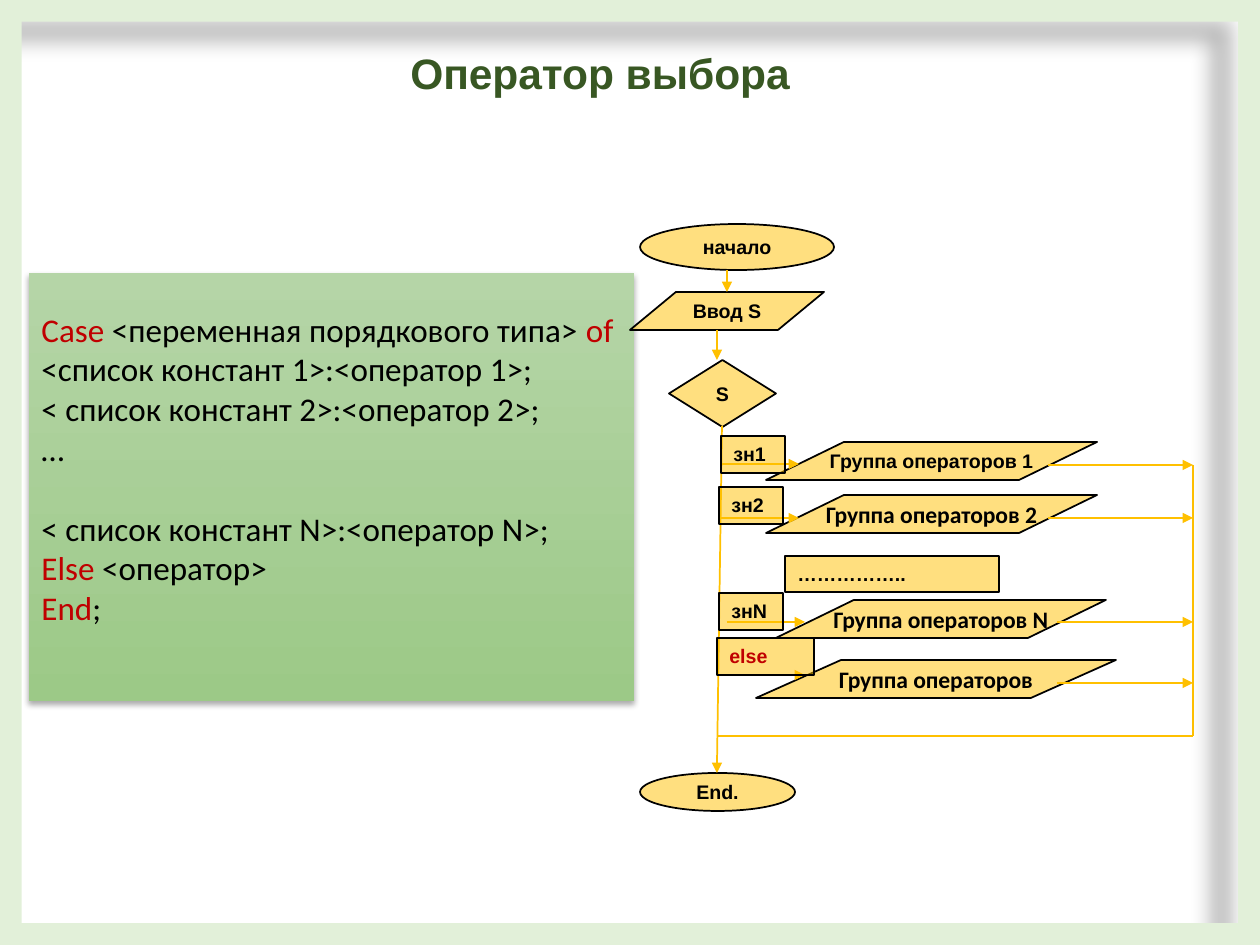
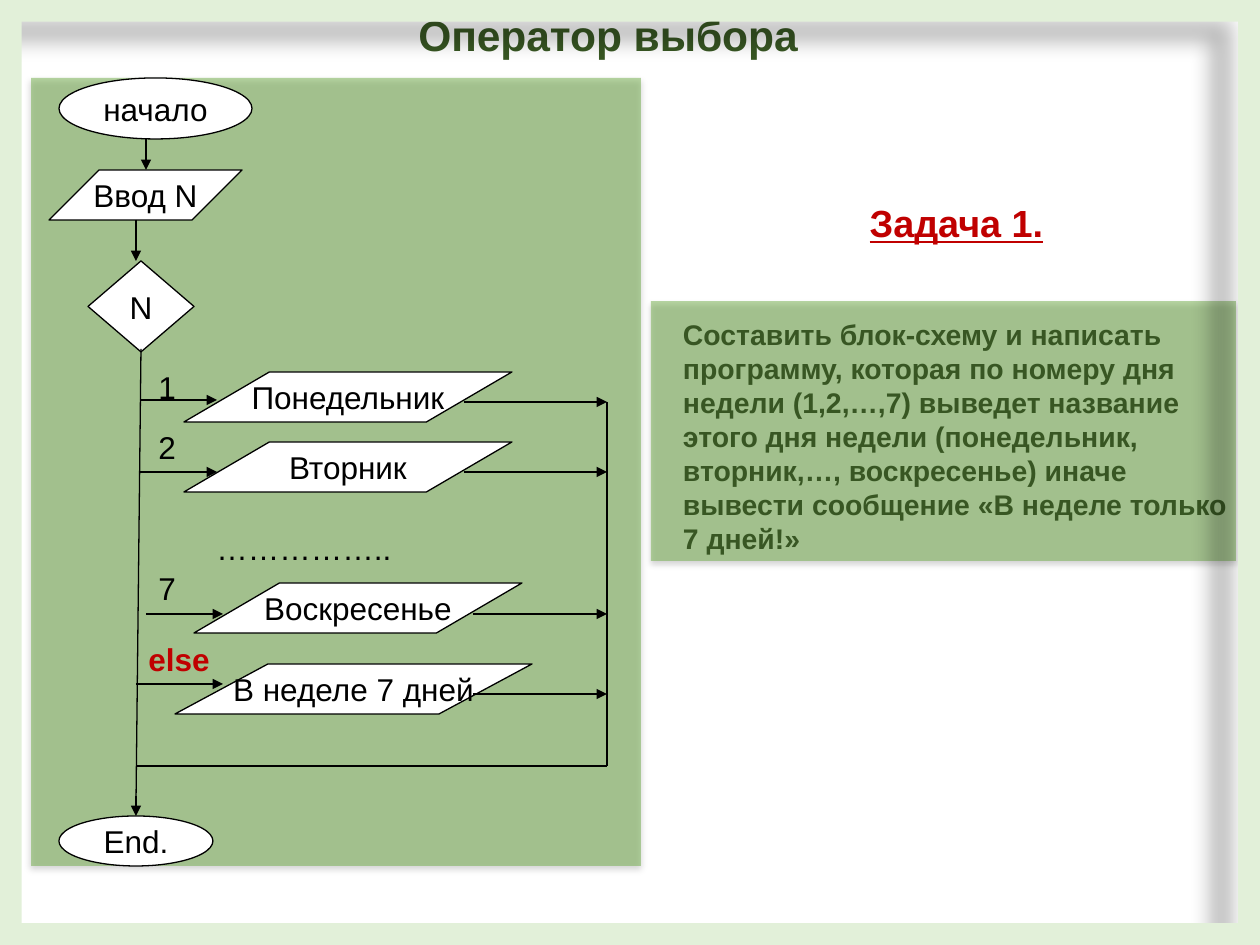
from dataclasses import dataclass

from lxml.etree import SubElement
from pptx import Presentation
from pptx.dml.color import RGBColor
from pptx.enum.shapes import MSO_CONNECTOR, MSO_SHAPE as Preset
from pptx.enum.text import MSO_ANCHOR as Anchor, MSO_AUTO_SIZE as AutoSize, PP_ALIGN as Align
from pptx.oxml.ns import qn
from pptx.util import Pt

EMU_PER_PX = 914400 / 126
PAGE_WIDTH, PAGE_HEIGHT = 1260, 945

BLACK = RGBColor(0x00, 0x00, 0x00)
WHITE = RGBColor(0xFF, 0xFF, 0xFF)
RED = RGBColor(0xC0, 0x00, 0x00)
AMBER = RGBColor(0xFF, 0xC0, 0x00)
GREEN = RGBColor(0x70, 0xAD, 0x47)
DARK_GREEN = RGBColor(0x38, 0x57, 0x23)
PALE_GREEN = RGBColor(0xE2, 0xF0, 0xD9)
GRADIENT = (RGBColor(0xB5, 0xD5, 0xA7), RGBColor(0x9C, 0xC9, 0x87))

TITLE = "Оператор выбора"
NO_MARGINS = dict(margin_left=0, margin_top=0, margin_right=0, margin_bottom=0)
CENTRED = dict(word_wrap=False, vertical_anchor=Anchor.MIDDLE)
LABEL = dict(word_wrap=True, vertical_anchor=Anchor.TOP)


@dataclass(frozen=True)
class Shadow:
    opacity: int
    blur: float
    distance: float
    direction: int


PANEL_SHADOW = Shadow(32, 3.5, 2.2, 90)
FRAME_SHADOW = Shadow(28, 11.8, 19.7, 141)


@dataclass(frozen=True)
class Box:
    left: int
    top: int
    width: int
    height: int


@dataclass(frozen=True)
class Style:
    fill: RGBColor
    opacity: int
    line: RGBColor
    outline: float
    size: float
    bold: bool
    filled_labels: bool


@dataclass(frozen=True)
class Node:
    preset: Preset
    text: str
    box: Box
    skew: float = 0
    font: str = "Arial"
    size: float = 0


@dataclass(frozen=True)
class Branch:
    label: str
    label_box: Box
    node: Node
    entry: tuple[int, int, int]
    exit: tuple[int, int]


@dataclass(frozen=True)
class Flowchart:
    style: Style
    nodes: list[Node]
    branches: list[Branch]
    dots_box: Box
    trunk: tuple[int, int, int, int]
    arrows: list[tuple[int, int, int]]
    rail_x: int
    return_y: int


def px(length: int) -> int:
    return round(length * EMU_PER_PX)


def place(box: Box) -> tuple[int, ...]:
    return px(box.left), px(box.top), px(box.width), px(box.height)


def assign(target, values: dict) -> None:
    for name, value in values.items():
        setattr(target, name, value)


def write(para, text: str, color: RGBColor, size: float, **values) -> None:
    span = para.add_run()
    span.text = text
    assign(span.font, dict(name="Arial", size=Pt(size)) | values)
    span.font.color.rgb = color


def add_alpha(color_element, percent: int) -> None:
    SubElement(color_element, qn("a:alpha")).set("val", str(percent * 1000))


def fill_solid(shape, color: RGBColor, opacity: int = 100) -> None:
    shape.fill.solid()
    shape.fill.fore_color.rgb = color
    if opacity < 100:
        add_alpha(shape.element.spPr.find(qn("a:solidFill"))[0], opacity)


def add_plain(shapes, preset: Preset, box: Box):
    """Add a preset shape with neither outline nor shadow."""
    shape = shapes.add_shape(preset, *place(box))
    shape.line.fill.background()
    shape.shadow.inherit = False
    return shape


def cast_shadow(shape, shadow: Shadow) -> None:
    effects = shape.element.spPr.find(qn("a:effectLst"))
    outer = SubElement(effects, qn("a:outerShdw"))
    for name, value in dict(blurRad=Pt(shadow.blur), dist=Pt(shadow.distance),
                            dir=shadow.direction * 60000, algn="tl", rotWithShape=0).items():
        outer.set(name, str(value))
    color = SubElement(outer, qn("a:srgbClr"))
    color.set("val", str(BLACK))
    add_alpha(color, shadow.opacity)


def add_panel(page, box: Box):
    panel = add_plain(page.shapes, Preset.RECTANGLE, box)
    fill_solid(panel, GREEN, 50)
    cast_shadow(panel, PANEL_SHADOW)
    return panel


def add_frame(page) -> None:
    frame = add_plain(page.shapes, Preset.FRAME, Box(0, 0, PAGE_WIDTH, PAGE_HEIGHT))
    frame.adjustments[0] = 0.023
    fill_solid(frame, PALE_GREEN)
    cast_shadow(frame, FRAME_SHADOW)


def start_page(deck, title_box: Box):
    page = deck.slides.add_slide(deck.slide_layouts[5])
    title = page.shapes.title
    assign(title, dict(zip(("left", "top", "width", "height"), place(title_box))))
    assign(title.text_frame, NO_MARGINS | dict(
        word_wrap=False, auto_size=AutoSize.NONE, vertical_anchor=Anchor.TOP))
    para = title.text_frame.paragraphs[0]
    para.alignment = Align.CENTER
    write(para, TITLE, DARK_GREEN, 24.3, bold=True)
    return page


def add_line(shapes, start: tuple[int, int], end: tuple[int, int], style: Style,
             arrow: bool = False) -> None:
    line = shapes.add_connector(MSO_CONNECTOR.STRAIGHT, *map(px, start + end))
    line.line.color.rgb = style.line
    line.line.width = Pt(style.outline)
    properties = line.element.spPr
    if arrow:
        SubElement(properties.find(qn("a:ln")), qn("a:tailEnd")).set("type", "triangle")
    SubElement(properties, qn("a:effectLst"))


def add_node(shapes, node: Node, style: Style) -> None:
    shape = add_plain(shapes, node.preset, node.box)
    fill_solid(shape, style.fill, style.opacity)
    shape.line.color.rgb = BLACK
    shape.line.width = Pt(style.outline)
    if node.skew:
        shape.adjustments[0] = node.skew
    assign(shape.text_frame, CENTRED)
    para = shape.text_frame.paragraphs[0]
    para.alignment = Align.CENTER
    write(para, node.text, BLACK, node.size or style.size, name=node.font, bold=style.bold)


def add_label(shapes, text: str, box: Box, style: Style) -> None:
    if style.filled_labels:
        label = add_plain(shapes, Preset.RECTANGLE, box)
        fill_solid(label, style.fill, style.opacity)
        label.line.color.rgb = BLACK
        label.line.width = Pt(0.75)
    else:
        label = shapes.add_textbox(*place(box))
    assign(label.text_frame, LABEL)
    is_else = text == "else"
    para = label.text_frame.paragraphs[0]
    para.alignment = Align.LEFT
    write(para, text, RED if is_else else BLACK, style.size, bold=style.bold or is_else)


def draw_flowchart(page, chart: Flowchart) -> None:
    shapes, style = page.shapes.add_group_shape().shapes, chart.style
    for node in chart.nodes + [branch.node for branch in chart.branches]:
        add_node(shapes, node, style)
    x1, y1, x2, y2 = chart.trunk
    add_line(shapes, (x1, y1), (x2, y2), style)
    for x, top, bottom in chart.arrows:
        add_line(shapes, (x, top), (x, bottom), style, arrow=True)
    for branch in chart.branches:
        start, end, y = branch.entry
        add_line(shapes, (start, y), (end, y), style, arrow=True)
        start, y = branch.exit
        add_line(shapes, (start, y), (chart.rail_x, y), style, arrow=True)
    corner = (chart.rail_x, chart.return_y)
    add_line(shapes, (chart.rail_x, chart.branches[0].exit[1]), corner, style)
    add_line(shapes, (x2, chart.return_y), corner, style)
    for branch in chart.branches:
        add_label(shapes, branch.label, branch.label_box, style)
    add_label(shapes, "……………..", chart.dots_box, style)


def group_node(text: str, box: Box, skew: float, font: str = "Arial", size: float = 0) -> Node:
    return Node(Preset.PARALLELOGRAM, text, box, skew, font, size)


GENERAL_CHART = Flowchart(
    style=Style(AMBER, 50, AMBER, 1, 11.2, True, True),
    nodes=[
        Node(Preset.OVAL, "начало", Box(640, 224, 194, 46)),
        Node(Preset.PARALLELOGRAM, "Ввод S", Box(630, 292, 194, 38), 1.21),
        Node(Preset.DIAMOND, "S", Box(669, 360, 107, 67)),
        Node(Preset.OVAL, "End.", Box(640, 773, 155, 38)),
    ],
    branches=[
        Branch("зн1", Box(721, 436, 64, 37),
               group_node("Группа операторов 1", Box(766, 442, 331, 38), 2.05),
               (721, 799, 464), (1048, 465)),
        Branch("зн2", Box(719, 487, 64, 37),
               group_node("Группа операторов 2", Box(766, 495, 331, 38), 2.05, "Calibri", 13.5),
               (721, 799, 518), (1048, 518)),
        Branch("знN", Box(719, 593, 64, 37),
               group_node("Группа операторов N", Box(776, 600, 330, 38), 2.05, "Calibri", 13.5),
               (727, 805, 622), (1057, 622)),
        Branch("else", Box(717, 638, 97, 37),
               group_node("Группа операторов", Box(756, 660, 360, 38), 2.24, "Calibri", 13.5),
               (717, 805, 675), (1057, 683)),
    ],
    dots_box=Box(785, 556, 214, 36),
    trunk=(722, 426, 717, 766),
    arrows=[(727, 270, 292), (717, 330, 360), (717, 759, 773)],
    rail_x=1193, return_y=736)

WEEKDAY_CHART = Flowchart(
    style=Style(WHITE, 100, BLACK, 0.75, 18, False, False),
    nodes=[
        Node(Preset.OVAL, "начало", Box(59, 78, 193, 61)),
        Node(Preset.PARALLELOGRAM, "Ввод N", Box(49, 170, 193, 50), 1),
        Node(Preset.DIAMOND, "N", Box(88, 261, 106, 91)),
        Node(Preset.OVAL, "End.", Box(59, 816, 154, 50)),
    ],
    branches=[
        Branch("1", Box(146, 362, 39, 50),
               group_node("Понедельник", Box(184, 372, 328, 50), 1.71),
               (140, 217, 400), (464, 402)),
        Branch("2", Box(146, 422, 39, 50),
               group_node("Вторник", Box(184, 442, 328, 50), 1.71),
               (140, 217, 472), (464, 472)),
        Branch("7", Box(146, 563, 39, 50),
               group_node("Воскресенье", Box(194, 583, 328, 50), 1.71),
               (146, 223, 614), (473, 614)),
        Branch("else", Box(136, 634, 96, 50),
               group_node("В неделе 7 дней", Box(175, 664, 357, 50), 1.86),
               (136, 223, 684), (473, 694)),
    ],
    dots_box=Box(204, 523, 212, 50),
    trunk=(141, 349, 136, 805),
    arrows=[(146, 139, 170), (136, 220, 261), (136, 796, 816)],
    rail_x=607, return_y=766)

SYNTAX = [
    [("Case", RED), (" <переменная порядкового типа> ", BLACK), ("of", RED)],
    [("<список констант 1>:<оператор 1>;", BLACK)],
    [("< список констант 2>:<оператор 2>;", BLACK)],
    [("…", BLACK)],
    [("< список констант N>:<оператор N>;", BLACK)],
    [("Else", RED), (" <оператор>", BLACK)],
    [("End", RED), (";", BLACK)],
]
TASK = ("Составить блок-схему и написать программу, которая по номеру дня недели (1,2,…,7) "
        "выведет название этого дня недели (понедельник, вторник,…, воскресенье) иначе "
        "вывести сообщение «В неделе только 7 дней!»")


def add_syntax_panel(page) -> None:
    panel = add_panel(page, Box(29, 273, 605, 428))
    panel.fill.gradient()
    panel.fill.gradient_angle = 270
    for stop, color in zip(panel.fill.gradient_stops, GRADIENT):
        stop.color.rgb = color
    frame = panel.text_frame
    assign(frame, LABEL | dict(margin_top=px(36), margin_right=0))
    for index, spans in enumerate(SYNTAX):
        para = frame.add_paragraph() if index else frame.paragraphs[0]
        para.alignment = Align.LEFT
        if spans[0][0].startswith("< список констант N"):
            para.space_before = Pt(23)
        for text, color in spans:
            write(para, text, color, 18.9, name="Calibri")


def add_task(page) -> None:
    frame = page.shapes.add_textbox(*place(Box(683, 241, 547, 273))).text_frame
    assign(frame, NO_MARGINS | CENTRED | dict(word_wrap=True))
    heading = frame.paragraphs[0]
    heading.alignment = Align.CENTER
    write(heading, "Задача 1.", RED, 21.6, bold=True, underline=True)
    body = frame.add_paragraph()
    assign(body, dict(alignment=Align.LEFT, space_before=Pt(41)))
    write(body, TASK, BLACK, 16.2, bold=True)


def main() -> None:
    deck = Presentation()
    deck.slide_width, deck.slide_height = px(PAGE_WIDTH), px(PAGE_HEIGHT)

    page = start_page(deck, Box(390, 47, 420, 60))
    add_syntax_panel(page)
    draw_flowchart(page, GENERAL_CHART)
    add_frame(page)

    page = start_page(deck, Box(398, 9, 420, 60))
    add_panel(page, Box(31, 78, 610, 788))
    add_task(page)
    draw_flowchart(page, WEEKDAY_CHART)
    add_panel(page, Box(651, 301, 585, 260))
    add_frame(page)

    deck.save("out.pptx")


if __name__ == "__main__":
    main()
